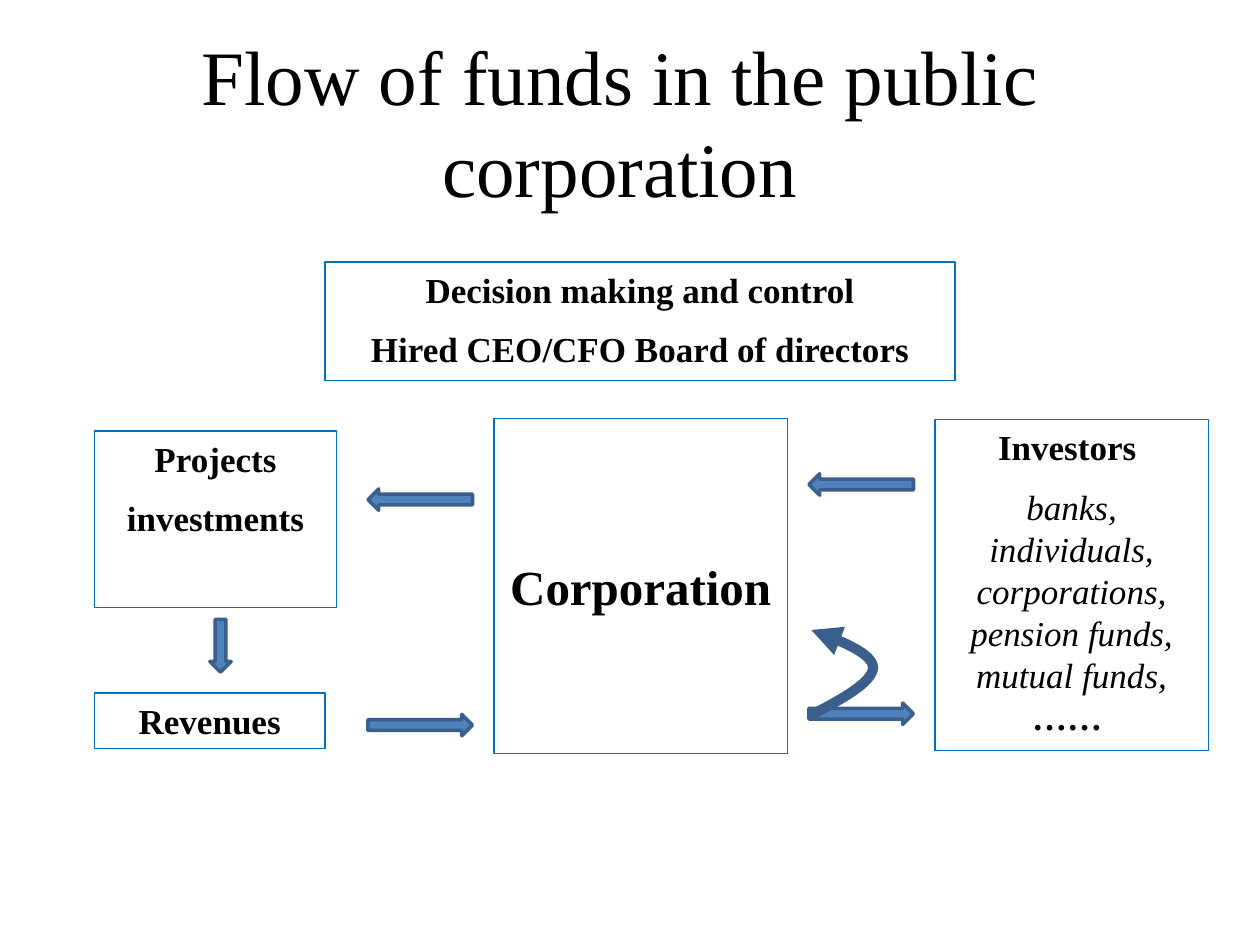
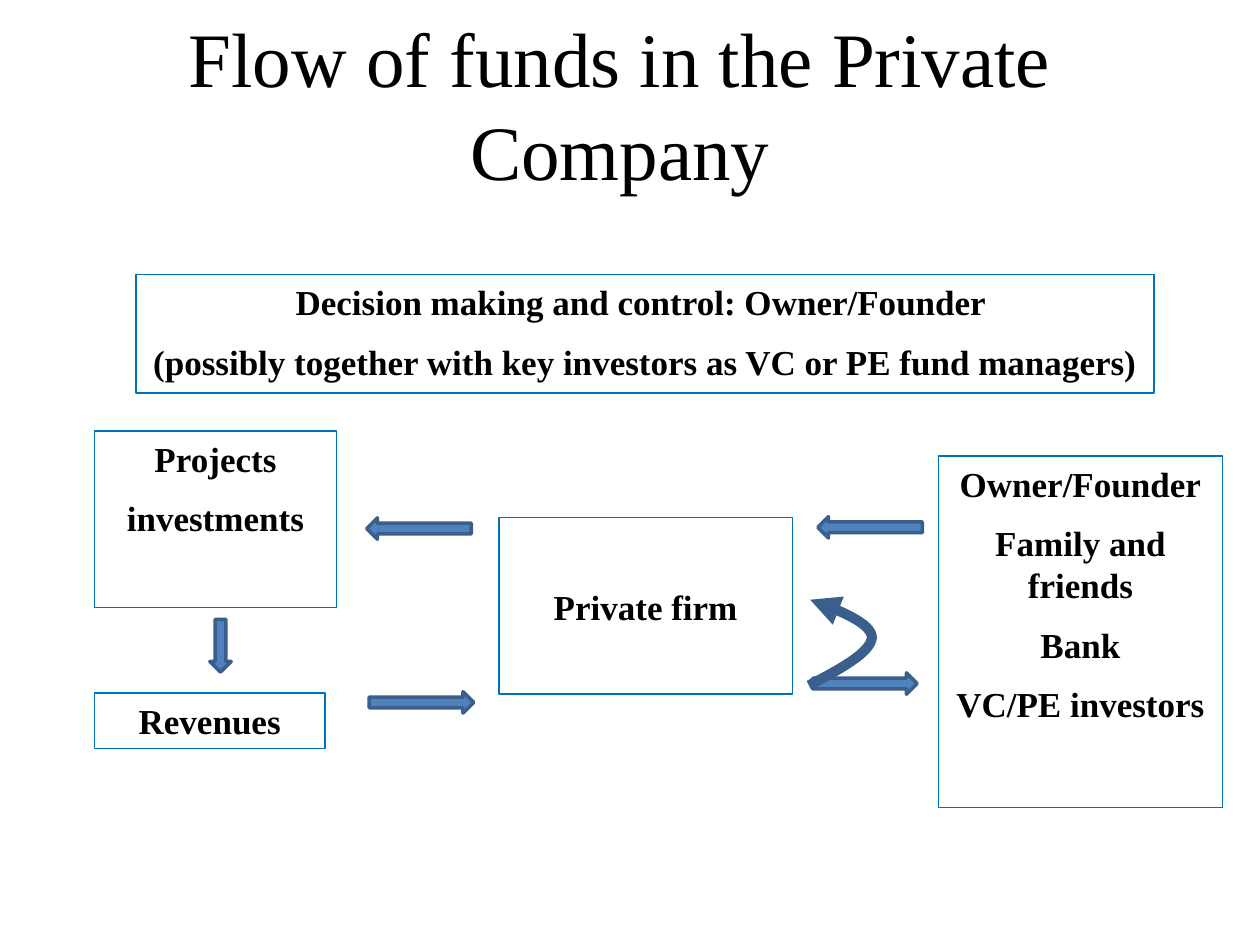
import pptx
import pptx.dml.color
import pptx.enum.shapes
import pptx.enum.text
import pptx.oxml
import pptx.oxml.ns
import pptx.util
from pptx.util import Inches

FONT = "Times New Roman"
INK, BORDER, ARROW_FILL, ARROW_LINE = "000000", "0070C0", "4F81BD", "3A5F8C"
SHAPES = pptx.enum.shapes.MSO_SHAPE
ANCHOR = pptx.enum.text.MSO_ANCHOR
BOLD, ITALIC = {"bold": True}, {"italic": True}

ARROW_LONG, ARROW_WIDE = 0.83, 0.17
LEFT, DOWN, RIGHT = 180, 90, 0
LOOP = [
    [(0, 0.68), (0.25, 0.55), (0.49, 0.42), (0.5, 0.3)],
    [(0.5, 0.3), (0.5, 0.19), (0.26, 0.09), (0.01, 0)],
]
LOOP_STEPS = 16

SHARED_BOXES = [
    {"at": (0.75, 3.42, 1.92, 1.4), "lines": ["Projects", "investments"]},
    {"at": (0.75, 5.5, 1.83, 0.44), "lines": ["Revenues"]},
]
SHARED_ARROWS = [(1.54, 5.04, 0.42, DOWN)]

PAGES = [
    {
        "title": "Flow of funds in the public corporation",
        "title_height": 1.42,
        "boxes": [
            {"at": (2.58, 2.08, 5, 0.94),
             "lines": ["Decision making and control", "Hired CEO/CFO Board of directors"]},
            {"at": (3.92, 3.32, 2.33, 2.66), "lines": ["Corporation"],
             "size": 28, "anchor": ANCHOR.MIDDLE},
            {"at": (7.42, 3.33, 2.17, 2.63),
             "lines": ["Investors ",
                       [("banks, individuals, corporations, pension funds, mutual funds, ", ITALIC),
                        ("…… ", BOLD)]]},
        ],
        "arrows": [(6.42, 3.76, ARROW_LONG, LEFT), (2.92, 3.88, ARROW_LONG, LEFT),
                   (2.92, 5.67, ARROW_LONG, RIGHT), (6.42, 5.58, ARROW_LONG, RIGHT)],
        "loop": (6.43, 5),
    },
    {
        "title": "Flow of funds in the Private Company",
        "title_height": 1.14,
        "boxes": [
            {"at": (1.08, 2.18, 8.08, 0.94),
             "lines": ["Decision making and control: Owner/Founder ",
                       "(possibly together with key investors as VC or PE fund managers)"]},
            {"at": (3.96, 4.11, 2.33, 1.4), "lines": ["Private firm"], "anchor": ANCHOR.MIDDLE},
            {"at": (7.45, 3.62, 2.25, 2.79),
             "lines": ["Owner/Founder", "Family and friends", "Bank", "VC/PE investors"]},
        ],
        "arrows": [(6.49, 4.1, ARROW_LONG, LEFT), (2.91, 4.11, ARROW_LONG, LEFT),
                   (2.93, 5.49, ARROW_LONG, RIGHT), (6.45, 5.34, ARROW_LONG, RIGHT)],
        "loop": (6.42, 4.76),
    },
]


def colour(value):
    """Turn a hex string into a colour."""
    return pptx.dml.color.RGBColor.from_string(value)


def add_span(para, text, size=20, bold=False, italic=False):
    """Add formatted text to a paragraph."""
    span = para.add_run()
    span.text = text
    font = span.font
    font.name, font.size = FONT, pptx.util.Pt(size)
    font.bold, font.italic = bold, italic
    font.color.rgb = colour(INK)


def style_shape(shape, line, width, fill=None):
    """Set the outline and fill of a shape and remove its shadow."""
    shape.shadow.inherit = False
    shape.line.color.rgb = colour(line)
    shape.line.width = pptx.util.Pt(width)
    if fill:
        shape.fill.solid()
        shape.fill.fore_color.rgb = colour(fill)
    else:
        shape.fill.background()


def set_title(page, text, height):
    """Place and fill the title."""
    title = page.shapes.title
    title.left, title.top = Inches(0.67), Inches(0.25)
    title.width, title.height = Inches(8.5), Inches(height)
    frame = title.text_frame
    frame.auto_size = pptx.enum.text.MSO_AUTO_SIZE.NONE
    frame.vertical_anchor = ANCHOR.MIDDLE
    frame.paragraphs[0].alignment = pptx.enum.text.PP_ALIGN.CENTER
    add_span(frame.paragraphs[0], text, size=44)


def add_box(page, at, lines, size=20, anchor=ANCHOR.TOP):
    """Draw an outlined box with centred paragraphs."""
    box = page.shapes.add_shape(SHAPES.RECTANGLE, *map(Inches, at))
    style_shape(box, BORDER, 0.75)
    frame = box.text_frame
    frame.word_wrap = True
    frame.vertical_anchor = anchor
    for index, line in enumerate(lines):
        para = frame.add_paragraph() if index else frame.paragraphs[0]
        para.alignment = pptx.enum.text.PP_ALIGN.CENTER
        para.space_before = pptx.util.Pt(size / 2 if index else 0)
        for text, style in [(line, BOLD)] if isinstance(line, str) else line:
            add_span(para, text, size=size, **style)


def add_arrow(page, left, top, length, turn):
    """Draw a block arrow turned by a number of degrees."""
    arrow = page.shapes.add_shape(
        SHAPES.RIGHT_ARROW, *map(Inches, (left, top, length, ARROW_WIDE)))
    arrow.rotation = turn
    style_shape(arrow, ARROW_LINE, 2, ARROW_FILL)


def curve_point(controls, t):
    """Return the point at t on a cubic curve."""
    weights = ((1 - t) ** 3, 3 * t * (1 - t) ** 2, 3 * t ** 2 * (1 - t), t ** 3)
    return [sum(w * point[axis] for w, point in zip(weights, controls)) for axis in (0, 1)]


def add_loop(page, left, top):
    """Draw the curved arrow that returns funds to the firm."""
    points = [curve_point(part, step / LOOP_STEPS)
              for part in LOOP for step in range(LOOP_STEPS + 1)]
    points = [(Inches(left + x), Inches(top + y)) for x, y in points]
    builder = page.shapes.build_freeform(*points[0])
    builder.add_line_segments(points[1:], close=False)
    loop = builder.convert_to_shape()
    style_shape(loop, ARROW_LINE, 5.75)
    outline = loop.line._get_or_add_ln()
    outline.append(pptx.oxml.parse_xml(
        f'<a:tailEnd {pptx.oxml.ns.nsdecls("a")} type="triangle"/>'))


def main():
    """Build both slides and save the deck."""
    deck = pptx.Presentation()
    deck.slide_width, deck.slide_height = Inches(10), Inches(7.5)
    for content in PAGES:
        page = deck.slides.add_slide(deck.slide_layouts[5])
        set_title(page, content["title"], content["title_height"])
        for box in SHARED_BOXES + content["boxes"]:
            add_box(page, **box)
        for arrow in SHARED_ARROWS + content["arrows"]:
            add_arrow(page, *arrow)
        add_loop(page, *content["loop"])
    deck.save("out.pptx")


if __name__ == "__main__":
    main()
